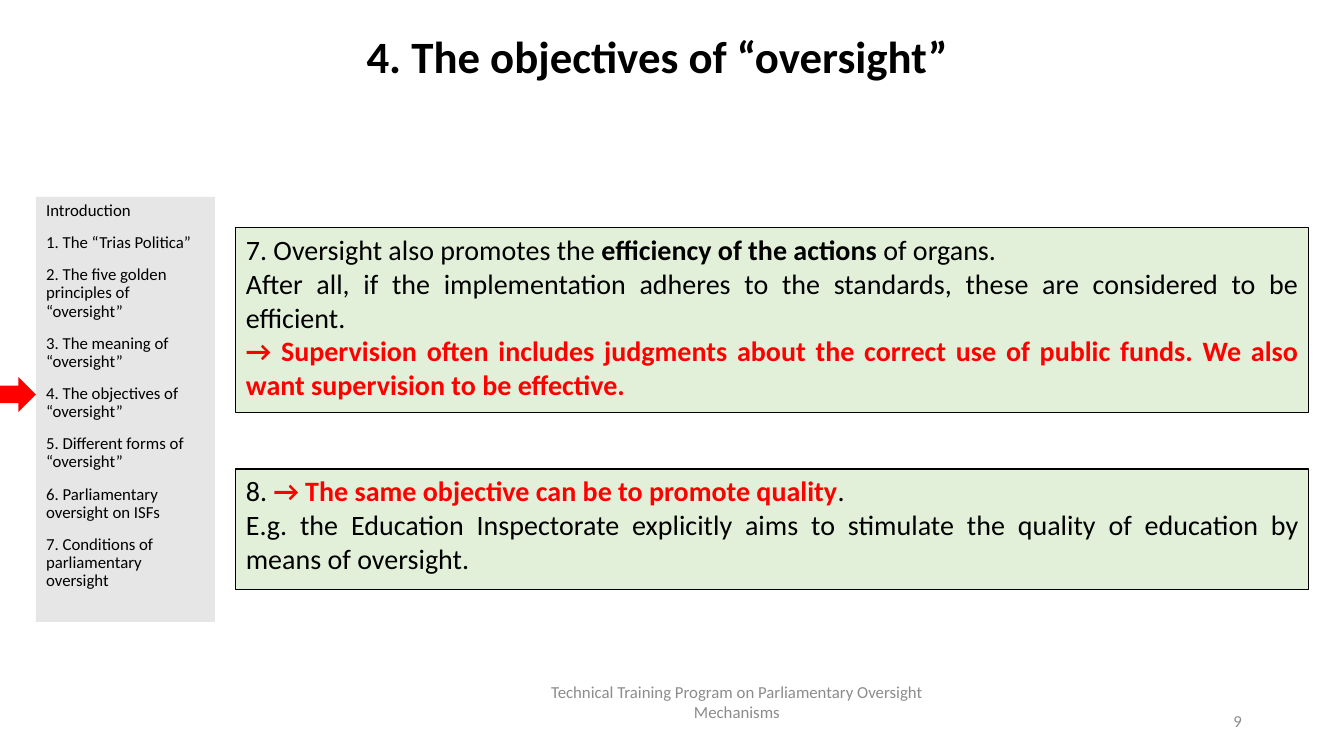
from lxml.etree import SubElement
from pptx import Presentation
from pptx.dml.color import RGBColor
from pptx.enum.shapes import MSO_SHAPE
from pptx.enum.text import MSO_ANCHOR, MSO_AUTO_SIZE, PP_ALIGN
from pptx.oxml.ns import qn
from pptx.util import Emu, Pt

BLACK = RGBColor(0x00, 0x00, 0x00)
RED = RGBColor(0xFF, 0x00, 0x00)
GRAY = RGBColor(0x8C, 0x8C, 0x8C)
PANEL = RGBColor(0xE7, 0xE6, 0xE6)
GREEN = RGBColor(0xE2, 0xF0, 0xD9)
FONT = "Calibri"

# Content: runs are (text, bold, colour)
TITLE = "4. The objectives of “oversight”"
OUTLINE = [
    "Introduction",
    "1. The “Trias Politica”",
    "2. The five golden principles of “oversight”",
    "3. The meaning of “oversight”",
    "4. The objectives of “oversight”",
    "5. Different forms of “oversight”",
    "6. Parliamentary oversight on ISFs",
    "7. Conditions of parliamentary oversight",
]
OBJECTIVES = [
    (228, 185, [
        [("7. Oversight also promotes the ", False, BLACK),
         ("efficiency of the actions ", True, BLACK),
         ("of organs.", False, BLACK)],
        [("After all, if the implementation adheres to the standards, "
          "these are considered to be efficient.", False, BLACK)],
        [("→ Supervision often includes judgments about the correct use of "
          "public funds. We also want supervision to be effective.", True, RED)],
    ]),
    (469, 121, [
        [("8. ", False, BLACK),
         ("→ The same objective can be to promote quality", True, RED),
         (".", False, BLACK)],
        [("E.g. the Education Inspectorate explicitly aims to stimulate the "
          "quality of education by means of oversight.", False, BLACK)],
    ]),
]
FOOTERS = [
    ("Technical Training Program on Parliamentary Oversight Mechanisms",
     (510, 682, 454, 40), PP_ALIGN.CENTER),
    ("9", (950, 701, 302, 40), PP_ALIGN.RIGHT),
]


def px(n):
    return Emu(round(n * 914400 / 100.8))


def place(sp, left, top, width, height):
    sp.left, sp.top, sp.width, sp.height = map(px, (left, top, width, height))


def frame(sp, anchor=MSO_ANCHOR.TOP):
    tf = sp.text_frame
    tf.word_wrap = True
    tf.auto_size = MSO_AUTO_SIZE.NONE
    tf.vertical_anchor = anchor
    return tf


def add_run(p, text, size, color=BLACK, bold=False):
    r = p.add_run()
    r.text = text
    r.font.name, r.font.size, r.font.bold = FONT, Pt(size), bold
    r.font.color.rgb = color


def add_box(kind, box, fill, line=None):
    sp = slide.shapes.add_shape(kind, *map(px, box))
    sp.shadow.inherit = False
    sp.fill.solid()
    sp.fill.fore_color.rgb = fill
    if line is None:
        sp.line.fill.background()
    else:
        sp.line.color.rgb = line
        sp.line.width = Pt(0.75)
    return sp


def paragraphs(tf, items):
    for i, item in enumerate(items):
        yield tf.paragraphs[0] if i == 0 else tf.add_paragraph(), item


prs = Presentation()
prs.slide_width, prs.slide_height = px(1344), px(756)
slide = prs.slides.add_slide(prs.slide_layouts[1])

# Title
title = slide.shapes.title
place(title, 302, 30, 711, 126)
p = frame(title).paragraphs[0]
p.alignment, p.line_spacing = PP_ALIGN.CENTER, 0.9
add_run(p, TITLE, 32, bold=True)

# Outline panel
panel = slide.placeholders[1]
place(panel, 36, 197, 179, 425)
panel.fill.solid()
panel.fill.fore_color.rgb = PANEL
for p, item in paragraphs(frame(panel), OUTLINE):
    pPr = p._p.get_or_add_pPr()
    pPr.set("marL", "0")
    pPr.set("indent", "0")
    SubElement(pPr, qn("a:buNone"))
    p.line_spacing = 0.9
    p.space_before = Pt(0 if item == OUTLINE[0] else 10)
    add_run(p, item, 12)

# Arrow at the current chapter
add_box(MSO_SHAPE.RIGHT_ARROW, (-11, 377, 47, 35), RED)

# Objectives
for top, height, lines in OBJECTIVES:
    sp = add_box(MSO_SHAPE.RECTANGLE, (236, top, 1073, height), GREEN, BLACK)
    for p, runs in paragraphs(frame(sp), lines):
        p.alignment = PP_ALIGN.JUSTIFY
        for text, bold, color in runs:
            add_run(p, text, 20, color, bold)

# Footer and page number
for text, box, align in FOOTERS:
    sp = slide.shapes.add_textbox(*map(px, box))
    p = frame(sp, MSO_ANCHOR.MIDDLE).paragraphs[0]
    p.alignment = align
    add_run(p, text, 12, GRAY)

prs.save("out.pptx")
